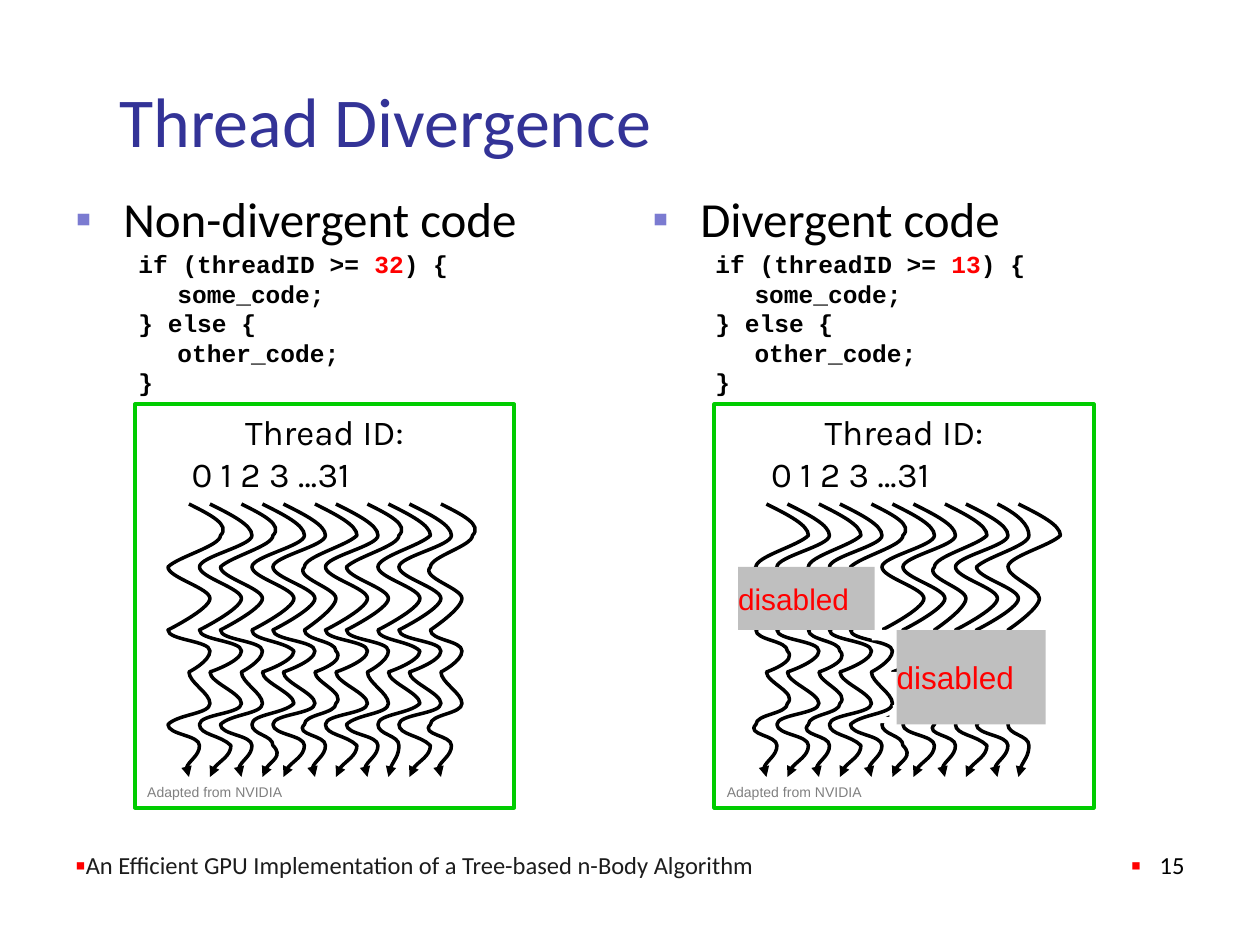
from dataclasses import dataclass
from typing import NamedTuple, Optional

from lxml.etree import SubElement
from pptx import Presentation
from pptx.dml.color import RGBColor
from pptx.enum.shapes import MSO_SHAPE
from pptx.enum.text import MSO_ANCHOR, PP_ALIGN
from pptx.oxml.ns import qn
from pptx.util import Inches, Pt

COLUMNS, ROWS = 120, 90
WIDTH, HEIGHT = Inches(10), Inches(7.5)
CELL = WIDTH // COLUMNS


@dataclass(frozen=True)
class Theme:
    title: str = "333397"
    text: str = "000000"
    footer: str = "1C1C1C"
    accent: str = "FF0000"
    bullet: str = "7B7BD1"
    frame: str = "00CC00"
    credit: str = "808080"
    cover: str = "BFBFBF"
    paper: str = "FFFFFF"
    sans: str = "Calibri"
    mono: str = "Courier New"
    label: str = "Karla"
    plain: str = "Arial"
    title_size: float = 40
    heading_size: float = 28
    panel_size: float = 20
    small_size: float = 14
    credit_size: float = 8


THEME = Theme()


class Box(NamedTuple):
    col: float
    row: float
    cols: float
    rows: float

    def emu(self) -> list[int]:
        return [round(value * CELL) for value in self]


class Style(NamedTuple):
    font: str
    size: float
    color: str
    bold: bool = False


class Bullet(NamedTuple):
    color: str
    percent: int


class Mask(NamedTuple):
    box: Box
    preset: MSO_SHAPE = MSO_SHAPE.RECTANGLE
    rotation: float = 0


class Cover(NamedTuple):
    box: Box
    size: float


class Side(NamedTuple):
    heading: str
    limit: str
    text_col: float
    panel_col: float


SIDES = [Side("Non-divergent code", "32", 6, 12.84),
         Side("Divergent code", "13", 60.96, 68.04)]
THREADS, THREAD_PITCH, FIRST_GAP = 11, 2.39, 0.24
# Cubic segments of one thread, in grid cells from its start
THREAD_CURVE = [
    (2, 1.2), (3.9, 2.3), (3.7, 3.2), (3.5, 4.2), (-1, 4.8), (-1.2, 5.7),
    (-1.4, 6.6), (2.5, 7.9), (2.5, 9), (2.5, 10.1), (-1.2, 11.4), (-1.2, 12.2),
    (-1.2, 13), (2.3, 13.1), (2.5, 13.8), (2.7, 14.5), (0, 15.5), (0, 16.2),
    (0, 17), (2.7, 17.9), (2.5, 18.7), (2.3, 19.4), (-1, 20.4), (-1.2, 21.1),
    (-1.4, 21.7), (1.1, 21.9), (1.3, 22.7), (1.5, 23.5), (-0.4, 25.3), (0, 25.9),
]
MASKS = [
    Mask(Box(85, 66.1, 9, 1), rotation=346.2),
    Mask(Box(83.64, 68.28, 9, 0.6)),
    Mask(Box(84, 64, 9, 1)),
    Mask(Box(83.04, 60, 9, 1)),
    Mask(Box(75, 55, 9, 5)),
    Mask(Box(76, 56, 9, 3)),
    Mask(Box(81, 55, 5, 3), MSO_SHAPE.OVAL),
    Mask(Box(85, 60, 5, 2), MSO_SHAPE.OVAL),
    Mask(Box(83.9, 61.7, 9, 1), rotation=21.7),
    Mask(Box(84.7, 67.8, 9, 0.6)),
]
COVERS = [Cover(Box(85.4, 60, 14.2, 9), 18), Cover(Box(70.3, 54, 13, 6), 17)]


def set_frame(frame, anchor=MSO_ANCHOR.TOP, left=0.1, right=0.1, top=0.05, bottom=0.05):
    values = {"word_wrap": True, "vertical_anchor": anchor,
              "margin_left": Inches(left), "margin_right": Inches(right),
              "margin_top": Inches(top), "margin_bottom": Inches(bottom)}
    for name, value in values.items():
        setattr(frame, name, value)
    return frame


def add_text_frame(slide, box: Box, **frame_values):
    return set_frame(slide.shapes.add_textbox(*box.emu()).text_frame, **frame_values)


def write(paragraph, style: Style, *parts: str, accent: Optional[str] = None, **layout) -> None:
    """Add one run per part; a part equal to accent takes the accent colour."""
    for name, value in layout.items():
        setattr(paragraph, name, value)
    for part in parts:
        run = paragraph.add_run()
        run.text = part
        for name, value in {"name": style.font, "size": Pt(style.size), "bold": style.bold}.items():
            setattr(run.font, name, value)
        color = THEME.accent if part == accent else style.color
        run.font.color.rgb = RGBColor.from_string(color)


def indent(paragraph, left: float, first: float = 0, bullet: Optional[Bullet] = None,
           tab: Optional[float] = None) -> None:
    properties = paragraph._p.get_or_add_pPr()
    properties.set("marL", str(Inches(left)))
    properties.set("indent", str(Inches(first)))
    if bullet:
        color = SubElement(properties, qn("a:buClr"))
        SubElement(color, qn("a:srgbClr"), val=bullet.color)
        SubElement(properties, qn("a:buSzPct"), val=str(bullet.percent * 1000))
        SubElement(properties, qn("a:buFont"), typeface=THEME.plain)
        SubElement(properties, qn("a:buChar"), char="▪")
    if tab:
        stops = SubElement(properties, qn("a:tabLst"))
        SubElement(stops, qn("a:tab"), pos=str(Inches(tab)), algn="l")


def add_block(slide, box: Box, preset=MSO_SHAPE.RECTANGLE, fill: Optional[str] = None,
              line: Optional[str] = None):
    block = slide.shapes.add_shape(preset, *box.emu())
    block.shadow.inherit = False
    if fill:
        block.fill.solid()
        block.fill.fore_color.rgb = RGBColor.from_string(fill)
    else:
        block.fill.background()
    if line:
        block.line.color.rgb = RGBColor.from_string(line)
        block.line.width = Pt(2.25)
    else:
        block.line.fill.background()
    return block


def add_thread(group, col: float, row: float) -> None:
    """Draw one wavy arrow, turning each three points into a cubic segment."""
    builder = group.shapes.build_freeform(col, row, scale=CELL)
    builder.add_line_segments([(col + dx, row + dy) for dx, dy in THREAD_CURVE], close=False)
    thread = builder.convert_to_shape()
    thread.shadow.inherit = False
    thread.fill.background()
    thread.line.color.rgb = RGBColor.from_string(THEME.text)
    thread.line.width = Pt(2)
    SubElement(thread.line._get_or_add_ln(), qn("a:tailEnd"), type="triangle")
    steps = list(thread._element.iter(qn("a:lnTo")))
    outline = steps[0].getparent()
    for start in range(0, len(steps), 3):
        cubic = SubElement(outline, qn("a:cubicBezTo"))
        for step in steps[start:start + 3]:
            cubic.append(step[0])
            outline.remove(step)


def add_code(slide, side: Side) -> None:
    frame = add_text_frame(slide, Box(side.text_col, 17.4, 52.92, 58.8))
    heading = frame.paragraphs[0]
    indent(heading, 0.38, -0.38, Bullet(THEME.bullet, 95))
    write(heading, Style(THEME.sans, THEME.heading_size, THEME.text), side.heading,
          space_after=Pt(1))
    code = Style(THEME.mono, THEME.small_size, THEME.text, bold=True)
    for parts in [("if (threadID >= ", side.limit, ") {"), ("\tsome_code;",),
                  ("} else {",), ("\tother_code;",), ("}",)]:
        line = frame.add_paragraph()
        indent(line, 0.81, -0.31)
        write(line, code, *parts, accent=side.limit, line_spacing=Pt(16.8))


def add_panel(slide, col: float) -> None:
    panel = add_block(slide, Box(col, 38.52, 36.12, 38.4), line=THEME.frame)
    frame = set_frame(panel.text_frame, left=0, right=0)
    style = Style(THEME.label, THEME.panel_size, THEME.text)
    write(frame.paragraphs[0], style, "Thread ID:", alignment=PP_ALIGN.CENTER)
    numbers = frame.add_paragraph()
    indent(numbers, 0.45, tab=2.1)
    write(numbers, style, "0 1 2 3 …\t31", alignment=PP_ALIGN.LEFT)
    group = slide.shapes.add_group_shape()
    for index in range(THREADS):
        gap = FIRST_GAP if index else 0
        add_thread(group, col + 4.8 + gap + index * THREAD_PITCH, 48.1)
    credit = add_text_frame(slide, Box(col, 74.04, 32.76, 2.88))
    write(credit.paragraphs[0], Style(THEME.plain, THEME.credit_size, THEME.credit),
          "Adapted from NVIDIA")


def add_covers(slide) -> None:
    for mask in MASKS:
        add_block(slide, mask.box, mask.preset, THEME.paper).rotation = mask.rotation
    for cover in COVERS:
        block = add_block(slide, cover.box, fill=THEME.cover)
        frame = set_frame(block.text_frame, MSO_ANCHOR.MIDDLE, 0, 0, 0, 0)
        write(frame.paragraphs[0], Style(THEME.plain, cover.size, THEME.accent), "disabled",
              alignment=PP_ALIGN.LEFT)


def add_footer(slide, box: Box, wording: str, color: str, hang: float, alignment) -> None:
    line = add_text_frame(slide, box, anchor=MSO_ANCHOR.BOTTOM).paragraphs[0]
    indent(line, hang, -hang, Bullet(THEME.accent, 120))
    write(line, Style(THEME.sans, THEME.small_size, color), wording, alignment=alignment)


def main() -> None:
    deck = Presentation()
    deck.slide_width, deck.slide_height = WIDTH, HEIGHT
    slide = deck.slides.add_slide(deck.slide_layouts[6])
    title = add_text_frame(slide, Box(6, 7.2, 108, 8.4), anchor=MSO_ANCHOR.MIDDLE, left=0.45)
    write(title.paragraphs[0], Style(THEME.sans, THEME.title_size, THEME.title),
          "Thread Divergence")
    for side in SIDES:
        add_code(slide, side)
        add_panel(slide, side.panel_col)
    add_covers(slide)
    add_footer(slide, Box(6, 78.36, 83.04, 6),
               "An Efficient GPU Implementation of a Tree-based n-Body Algorithm",
               THEME.footer, 0, PP_ALIGN.LEFT)
    add_footer(slide, Box(89.04, 78.36, 24.96, 6), "15", THEME.text, 0.23, PP_ALIGN.RIGHT)
    deck.save("out.pptx")


if __name__ == "__main__":
    main()
